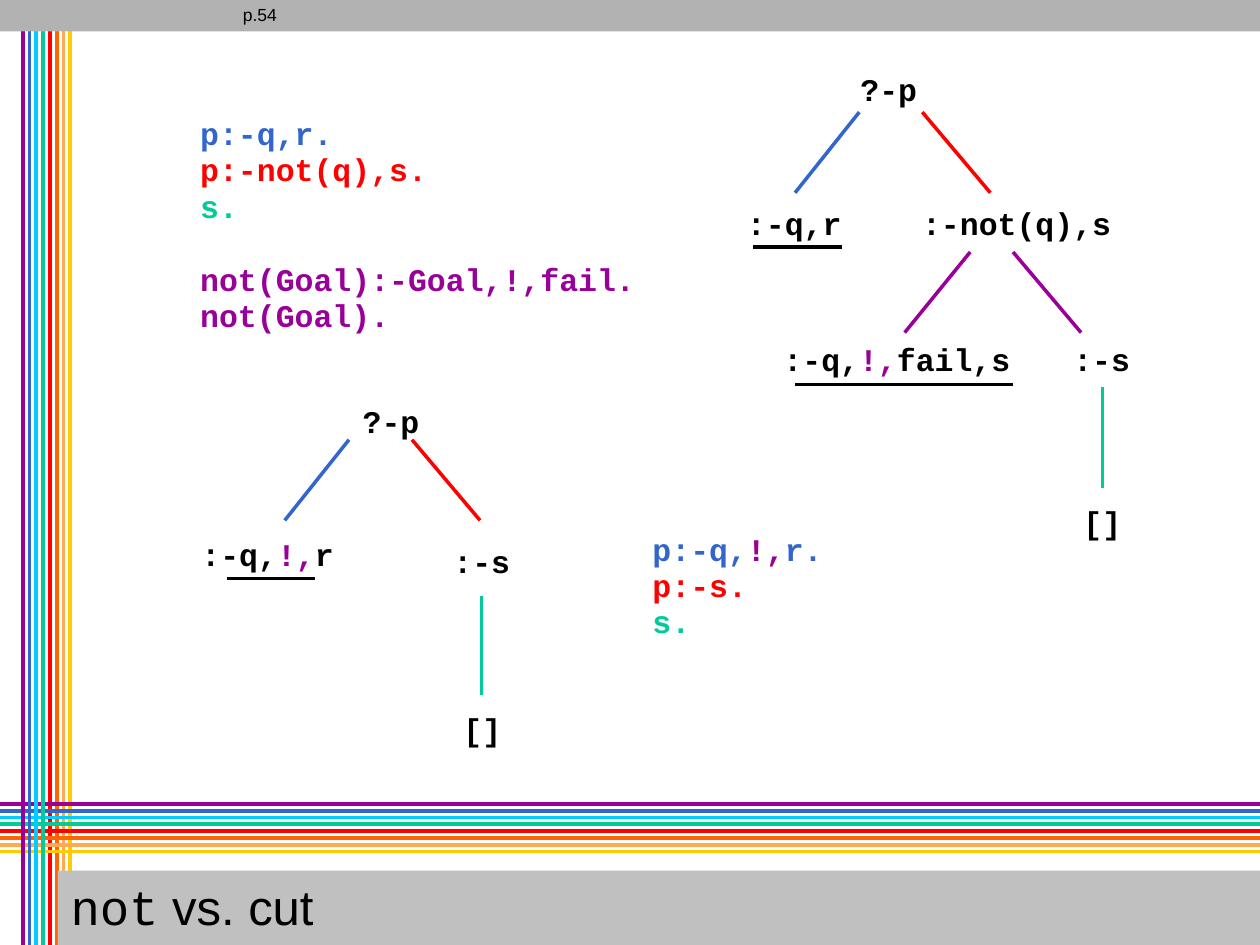
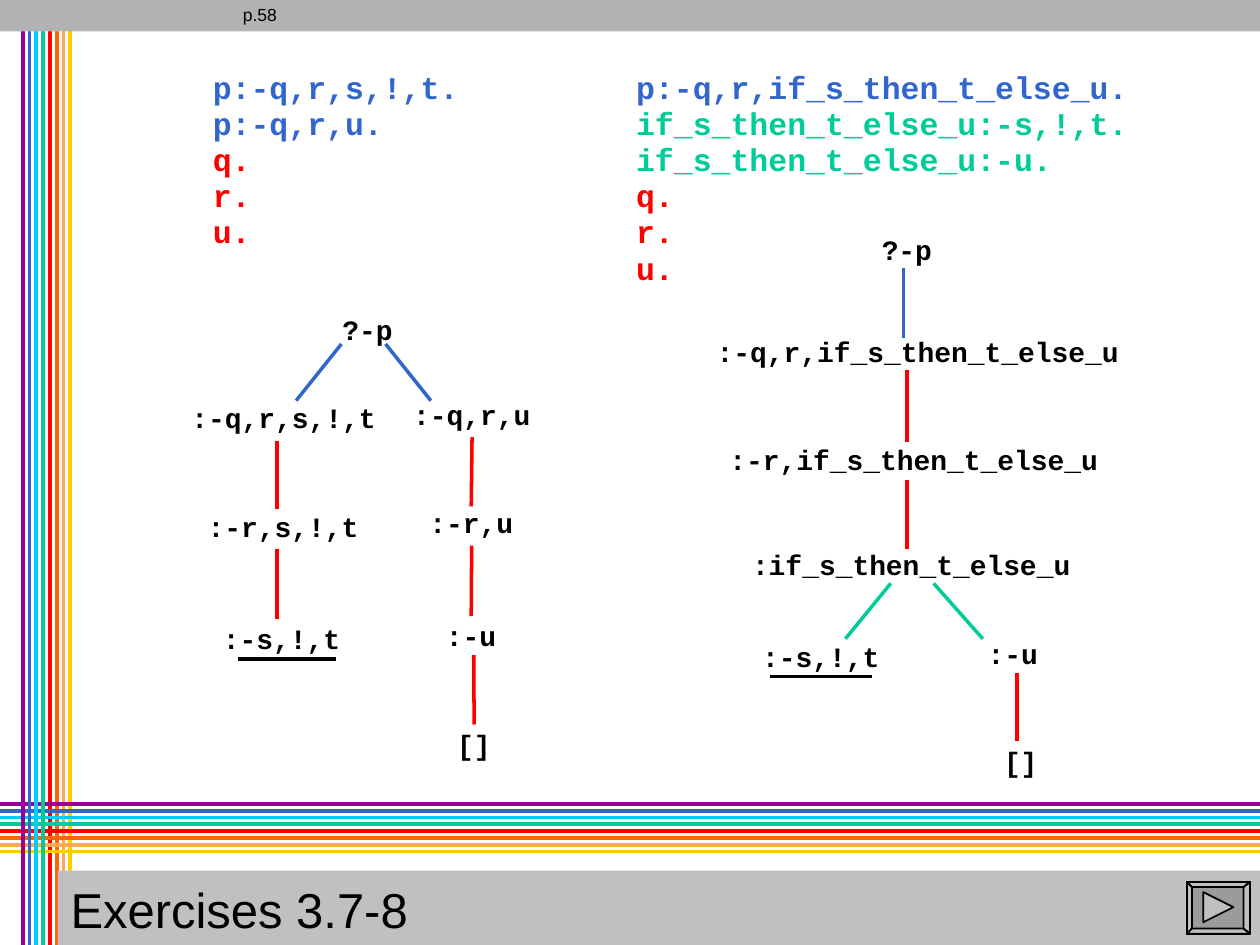
import pptx
import pptx.dml.color
import pptx.enum.shapes
import pptx.enum.text
import pptx.util
from pptx.oxml.ns import qn
from lxml import etree

Inches = pptx.util.Inches
Pt = pptx.util.Pt
RGBColor = pptx.dml.color.RGBColor

BLACK = RGBColor(0x00, 0x00, 0x00)
PURPLE = RGBColor(0x99, 0x00, 0x99)
BLUE = RGBColor(0x33, 0x66, 0xCC)
CYAN = RGBColor(0x00, 0xCC, 0xFF)
GREEN = RGBColor(0x00, 0xCC, 0x99)
RED = RGBColor(0xFF, 0x00, 0x00)
ORANGE = RGBColor(0xFF, 0x66, 0x00)
PEACH = RGBColor(0xFF, 0xA9, 0x53)
YELLOW = RGBColor(0xFF, 0xCC, 0x00)
TOP_GREY = RGBColor(0xB2, 0xB2, 0xB2)
TITLE_GREY = RGBColor(0xC0, 0xC0, 0xC0)
BUTTON_GREY = RGBColor(0x9B, 0x9B, 0x9B)

RAINBOW = [PURPLE, BLUE, CYAN, GREEN, RED, ORANGE, PEACH, YELLOW]
STRIPE_GAP = 0.054
SANS, MONO = "Arial", "Courier New"
CODE_SIZE = 18
CODE_LEADING = 20.7
PARAGRAPH_GAP = 21.4
JOIN_TOLERANCE = 0.02

# Runs are (text, colour); goals are (left, top, runs or plain text);
# branches are (colour, x1, y1, x2, y2); programs are (left, top, paragraphs).
SLIDES = [
    {
        "title": [("not", MONO), (" vs. cut", SANS)],
        "title_leading": 30.2,
        "page": "p.54",
        "goal_size": 18,
        "goals": [
            (6.73, 0.54, "?-p"),
            (7.22, 1.6, ":-not(q),s"),
            (5.83, 1.6, ":-q,r"),
            (6.12, 2.68, [(":-q,", BLACK), ("!,", PURPLE), ("fail,s", BLACK)]),
            (8.42, 2.68, ":-s"),
            (8.5, 3.97, "[]"),
            (2.78, 3.17, "?-p"),
            (1.5, 4.23, [(":-q,", BLACK), ("!,", PURPLE), ("r", BLACK)]),
            (3.5, 4.28, ":-s"),
            (3.58, 5.62, "[]"),
        ],
        "branches": [
            (RED, 7.86, 1.53, 7.32, 0.89),
            (BLUE, 6.31, 1.53, 6.82, 0.89),
            (BLACK, 5.98, 1.96, 6.68, 1.96),
            (PURPLE, 7.18, 2.64, 7.7, 2),
            (BLACK, 6.31, 3.05, 8.04, 3.05),
            (PURPLE, 8.58, 2.64, 8.04, 2),
            (GREEN, 8.75, 3.07, 8.75, 3.87),
            (BLUE, 2.26, 4.13, 2.77, 3.49),
            (BLACK, 1.8, 4.59, 2.5, 4.59),
            (RED, 3.81, 4.13, 3.27, 3.49),
            (GREEN, 3.82, 4.73, 3.82, 5.52),
        ],
        "programs": [
            (1.49, 0.87, [
                [("p:-q,r.\n", BLUE), ("p:-not(q),s.\n", RED), ("s.", GREEN)],
                [("not(Goal):-Goal,!,fail.\nnot(Goal).", PURPLE)],
            ]),
            (5.08, 4.17, [
                [("p:-q,", BLUE), ("!,", PURPLE), ("r.\n", BLUE),
                 ("p:-s.\n", RED), ("s.", GREEN)],
            ]),
        ],
        "button": False,
    },
    {
        "title": [("Exercises 3.7-8", SANS)],
        "title_leading": None,
        "page": "p.58",
        "goal_size": 16,
        "goals": [
            (2.62, 2.46, "?-p"),
            (1.42, 3.16, ":-q,r,s,!,t"),
            (1.55, 4.02, ":-r,s,!,t"),
            (1.67, 4.91, ":-s,!,t"),
            (3.18, 3.13, ":-q,r,u"),
            (3.31, 3.99, ":-r,u"),
            (3.44, 4.89, ":-u"),
            (3.53, 5.75, "[]"),
            (6.9, 1.82, "?-p"),
            (5.59, 2.63, ":-q,r,if_s_then_t_else_u"),
            (5.69, 3.49, ":-r,if_s_then_t_else_u"),
            (5.87, 4.32, ":if_s_then_t_else_u"),
            (5.95, 5.05, ":-s,!,t"),
            (7.74, 5.03, ":-u"),
            (7.87, 5.89, "[]"),
        ],
        "branches": [
            (BLUE, 2.35, 3.18, 2.71, 2.73),
            (RED, 2.2, 3.5, 2.2, 4.04),
            (RED, 2.2, 4.36, 2.2, 4.91),
            (BLACK, 1.89, 5.23, 2.67, 5.23),
            (BLUE, 3.42, 3.18, 3.06, 2.73),
            (RED, 3.74, 3.47, 3.74, 4.02),
            (RED, 3.74, 4.34, 3.74, 4.91),
            (RED, 3.76, 5.2, 3.76, 5.74),
            (BLUE, 7.17, 2.13, 7.17, 2.68),
            (RED, 7.2, 2.94, 7.2, 3.51),
            (RED, 7.2, 3.81, 7.2, 4.36),
            (GREEN, 6.71, 5.07, 7.07, 4.63),
            (GREEN, 7.8, 5.07, 7.41, 4.63),
            (BLACK, 6.11, 5.37, 6.92, 5.37),
            (RED, 8.07, 5.34, 8.07, 5.88),
        ],
        "programs": [
            (1.59, 0.5, [[("p:-q,r,s,!,t.\np:-q,r,u.\n", BLUE), ("q.\nr.\nu.", RED)]]),
            (4.95, 0.5, [[
                ("p:-q,r,if_s_then_t_else_u.\n", BLUE),
                ("if_s_then_t_else_u:-s,!,t.\nif_s_then_t_else_u:-u.\n", GREEN),
                ("q.\nr.\nu.", RED),
            ]]),
        ],
        "button": True,
    },
]


def add_run(paragraph, text, size, font=MONO, color=BLACK, bold=False):
    """Add text to the paragraph, turning each newline into a line break."""
    for index, line in enumerate(text.split("\n")):
        if index:
            paragraph.add_line_break()
        if line:
            run = paragraph.add_run()
            run.text = line
            run.font.name = font
            run.font.size = Pt(size)
            run.font.bold = bold
            run.font.color.rgb = color


def add_line(slide, color, width, x1, y1, x2, y2):
    line = slide.shapes.add_connector(
        pptx.enum.shapes.MSO_CONNECTOR.STRAIGHT,
        Inches(x1), Inches(y1), Inches(x2), Inches(y2))
    line.line.color.rgb = color
    line.line.width = Pt(width)
    etree.SubElement(line.element.spPr, qn("a:effectLst"))
    return line


def add_mono_box(slide, left, top, paragraphs, size, leading):
    """Add bold monospaced text in a box computed from its characters and lines."""
    texts = ["".join(text for text, _ in runs) for runs in paragraphs]
    lines = "\n".join(texts).split("\n")
    width = max(map(len, lines)) * 0.6 * size / 72 + 0.2
    gaps = (len(paragraphs) - 1) * PARAGRAPH_GAP
    height = (len(lines) * leading + gaps) / 72 + 0.1
    box = slide.shapes.add_textbox(Inches(left), Inches(top), Inches(width), Inches(height))
    box.text_frame.word_wrap = False
    for index, runs in enumerate(paragraphs):
        paragraph = box.text_frame.paragraphs[0]
        if index:
            paragraph = box.text_frame.add_paragraph()
            paragraph.space_before = Pt(PARAGRAPH_GAP)
        paragraph.line_spacing = Pt(leading)
        for text, color in runs:
            add_run(paragraph, text, size, color=color, bold=True)
    return box


def join_ends(branch, goals):
    """Join each end of the branch that meets the middle of a goal's top or bottom."""
    ends = [(branch.begin_connect, branch.begin_x, branch.begin_y),
            (branch.end_connect, branch.end_x, branch.end_y)]
    tolerance = Inches(JOIN_TOLERANCE)
    for connect, x, y in ends:
        for goal in goals:
            for site, side in ((0, goal.top), (2, goal.top + goal.height)):
                middle = goal.left + goal.width / 2
                if abs(x - middle) <= tolerance and abs(y - side) <= tolerance:
                    connect(goal, site)


def decorate_layout(layout, slide):
    """Draw the stripes and top band on the slide, then move them to its layout."""
    for placeholder in list(layout.placeholders):
        if placeholder.placeholder_format.type != pptx.enum.shapes.PP_PLACEHOLDER.TITLE:
            placeholder.element.getparent().remove(placeholder.element)
    columns = [(color, 2.25, 0.18 + i * STRIPE_GAP, 0, 0.18 + i * STRIPE_GAP, 7.5)
               for i, color in enumerate(RAINBOW)]
    rows = [(color, 2.25, 10, 6.38 + i * STRIPE_GAP, 0, 6.38 + i * STRIPE_GAP)
            for i, color in enumerate(RAINBOW)]
    # The warm columns pass under the rows and the cool ones over them.
    parts = [add_line(slide, *stripe) for stripe in columns[4:] + rows + columns[:4]]
    band = slide.shapes.add_shape(
        pptx.enum.shapes.MSO_SHAPE.RECTANGLE, 0, 0, Inches(10), Inches(0.25))
    band.shadow.inherit = False
    band.fill.solid()
    band.fill.fore_color.rgb = TOP_GREY
    band.line.fill.background()
    for part in parts + [band]:
        layout.shapes.element.append(part.element)


def set_title(slide, runs, leading):
    title = slide.shapes.title
    title.left, title.top = Inches(0.46), Inches(6.91)
    title.width, title.height = Inches(9.54), Inches(0.6)
    title.fill.solid()
    title.fill.fore_color.rgb = TITLE_GREY
    frame = title.text_frame
    frame.auto_size = pptx.enum.text.MSO_AUTO_SIZE.NONE
    frame.vertical_anchor = pptx.enum.text.MSO_ANCHOR.MIDDLE
    paragraph = frame.paragraphs[0]
    paragraph.alignment = pptx.enum.text.PP_ALIGN.LEFT
    if leading:
        paragraph.line_spacing = Pt(leading)
    for text, font in runs:
        add_run(paragraph, text, 28, font)


def add_page_reference(slide, text):
    box = slide.shapes.add_textbox(Inches(1.83), 0, Inches(0.76), Inches(0.25))
    box.text_frame.word_wrap = True
    paragraph = box.text_frame.paragraphs[0]
    paragraph.line_spacing = Pt(10.8)
    add_run(paragraph, text, 10, SANS)


def add_next_button(slide):
    """Draw a bevelled button with a triangle, in hundredths of an inch."""
    outer = [(942, 700), (992, 700), (992, 741), (942, 741)]
    inner = [(946, 704), (987, 704), (987, 737), (946, 737)]
    triangle = [(955, 708), (979, 720), (955, 732)]
    bevels = [[outer[i], outer[(i + 1) % 4], inner[(i + 1) % 4], inner[i]]
              for i in range(4)]
    builder = slide.shapes.build_freeform(*outer[0], scale=Inches(0.01))
    builder.add_line_segments(outer[1:], close=True)
    for outline in bevels + [triangle]:
        builder.move_to(*outline[0])
        builder.add_line_segments(outline[1:], close=True)
    button = builder.convert_to_shape()
    button.shadow.inherit = False
    button.fill.solid()
    button.fill.fore_color.rgb = BUTTON_GREY
    button.line.color.rgb = BLACK
    button.line.width = Pt(1)


def add_tree(slide, goals, branches, size):
    boxes = []
    for left, top, goal in goals:
        runs = [(goal, BLACK)] if isinstance(goal, str) else goal
        boxes.append(add_mono_box(slide, left, top, [runs], size, round(size * 1.08, 1)))
    for color, *ends in branches:
        join_ends(add_line(slide, color, 2, *ends), boxes)


def main():
    presentation = pptx.Presentation()
    presentation.slide_width, presentation.slide_height = Inches(10), Inches(7.5)
    layout = presentation.slide_layouts[5]
    for index, content in enumerate(SLIDES):
        slide = presentation.slides.add_slide(layout)
        if index == 0:
            decorate_layout(layout, slide)
        set_title(slide, content["title"], content["title_leading"])
        add_tree(slide, content["goals"], content["branches"], content["goal_size"])
        for left, top, paragraphs in content["programs"]:
            add_mono_box(slide, left, top, paragraphs, CODE_SIZE, CODE_LEADING)
        add_page_reference(slide, content["page"])
        if content["button"]:
            add_next_button(slide)
    presentation.save("out.pptx")


if __name__ == "__main__":
    main()
